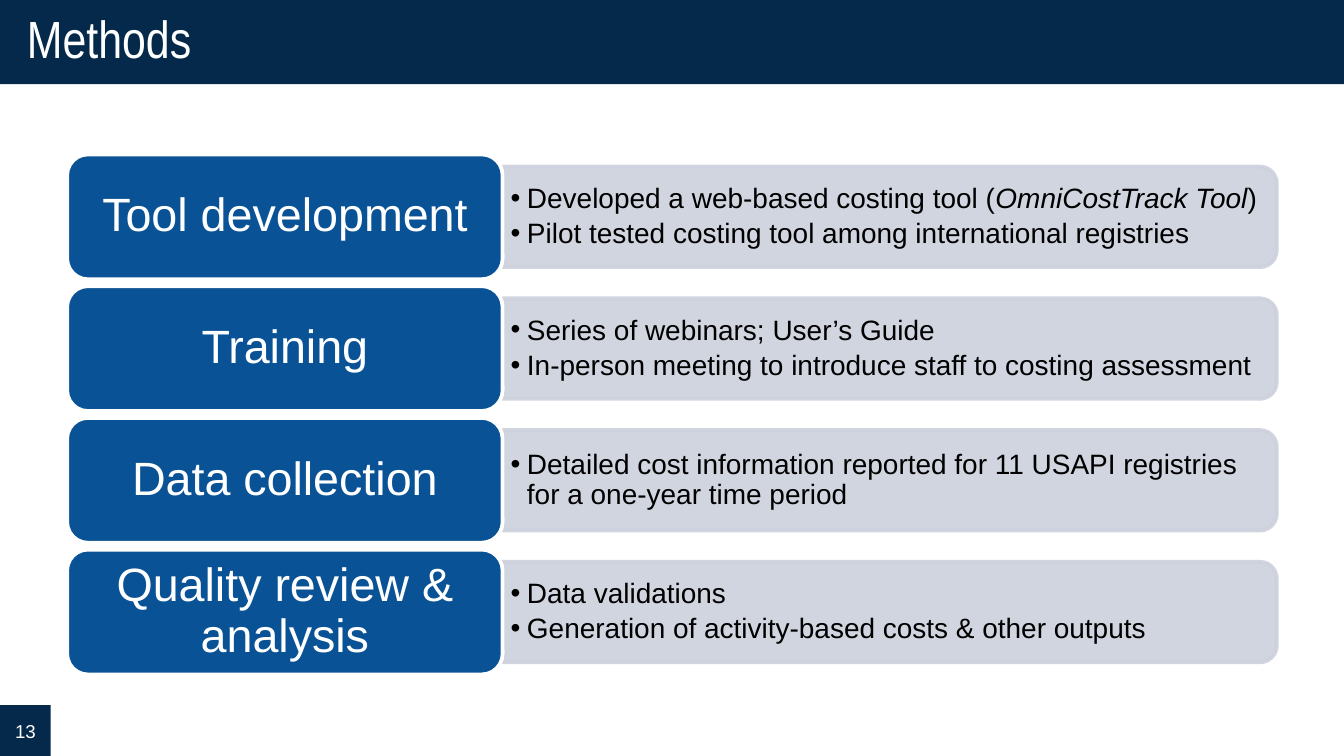
"""Build the Methods slide: four labelled steps, each with a band of details."""
from lxml.etree import SubElement
from pptx import Presentation
from pptx.dml.color import RGBColor
from pptx.enum.shapes import MSO_SHAPE as Shape
from pptx.enum.text import MSO_ANCHOR as Anchor, PP_ALIGN as Align
from pptx.oxml.ns import qn
from pptx.util import Cm, Pt

COLORS = {"navy": "04294A", "blue": "085295", "band": "CCD1DD", "white": "FFFFFF", "black": "000000"}
STEPS = [
    ("Tool development", ["Developed a web-based costing tool (*OmniCostTrack Tool*)",
                          "Pilot tested costing tool among international registries"]),
    ("Training", ["Series of webinars; User’s Guide",
                  "In-person meeting to introduce staff to costing assessment"]),
    ("Data collection", ["Detailed cost information reported for 11 USAPI registries for a one-year time period"]),
    ("Quality review & analysis", ["Data validations",
                                   "Generation of activity-based costs & other outputs"]),
]


def add_block(kind, left, top, width, height, fill, line=None, opacity=None):
    block = slide.shapes.add_shape(kind, Cm(left), Cm(top), Cm(width), Cm(height))
    block.shadow.inherit = False
    block.fill.solid()
    block.fill.fore_color.rgb = RGBColor.from_string(COLORS[fill])
    if line:
        block.line.width = Pt(2)
        block.line.color.rgb = RGBColor.from_string(COLORS[line])
    else:
        block.line.fill.background()
    if opacity:
        for color in block._element.spPr.iter(qn("a:srgbClr")):
            SubElement(color, qn("a:alpha"), val=str(opacity * 1000))
    return block


def write(holder, *lines, size, color="white", font="Arial", align=Align.CENTER,
          inset=(0.25, 0.13), spacing=0.9, after=0, bullet=False):
    frame = holder.text_frame
    frame.word_wrap = True
    frame.vertical_anchor = Anchor.MIDDLE
    frame.margin_left = frame.margin_right = Cm(inset[0])
    frame.margin_top = frame.margin_bottom = Cm(inset[1])
    for number, line in enumerate(lines):
        paragraph = frame.add_paragraph() if number else frame.paragraphs[0]
        paragraph.alignment = align
        paragraph.line_spacing = spacing
        paragraph.space_after = Pt(after)
        if bullet:
            paragraph.level = 1
            properties = paragraph._p.get_or_add_pPr()
            properties.set("marL", str(Cm(0.31)))
            properties.set("indent", str(Cm(-0.31)))
            SubElement(properties, qn("a:buFont"), typeface="Arial")
            SubElement(properties, qn("a:buChar"), char="•")
        for part, words in enumerate(line.split("*")):
            run = paragraph.add_run()
            run.text = words
            run.font.size = Pt(size)
            run.font.name = font
            run.font.italic = part % 2 == 1
            run.font.color.rgb = RGBColor.from_string(COLORS[color])


deck = Presentation()
deck.slide_width, deck.slide_height = Cm(25.4), Cm(14.29)
slide = deck.slides.add_slide(deck.slide_layouts[6])

title = add_block(Shape.RECTANGLE, 0, 0, 25.4, 1.59, "navy")
write(title, "Methods", size=28, font="Arial Narrow", align=Align.LEFT, inset=(0.51, 0.25))

label_left, label_width, label_height = 1.27, 8.23, 2.36
band_left, band_width, band_height = label_left + label_width, 14.63, 1.9
first_middle, pitch = 4.1, 2.49

for row, (step, details) in enumerate(STEPS):
    middle = first_middle + row * pitch
    band = add_block(Shape.ROUND_2_SAME_RECTANGLE, band_left + (band_width - band_height) / 2,
                     middle - band_width / 2, band_height, band_width, "band", "band", opacity=90)
    band.rotation = 90
    detail = slide.shapes.add_textbox(Cm(band_left), Cm(middle - 0.85), Cm(14.53), Cm(1.7))
    write(detail, *details, size=15, color="black", align=Align.LEFT, inset=(0.15, 0.08),
          after=2.6, bullet=True)
    label = add_block(Shape.ROUNDED_RECTANGLE, label_left, middle - label_height / 2,
                      label_width, label_height, "blue", "white")
    write(label, step, size=25, inset=(0.38, 0.23))

page = add_block(Shape.RECTANGLE, 0, 13.33, 0.96, 0.96, "navy")
write(page, "13", size=10, inset=(0, 0), spacing=1.0)

deck.save("out.pptx")
